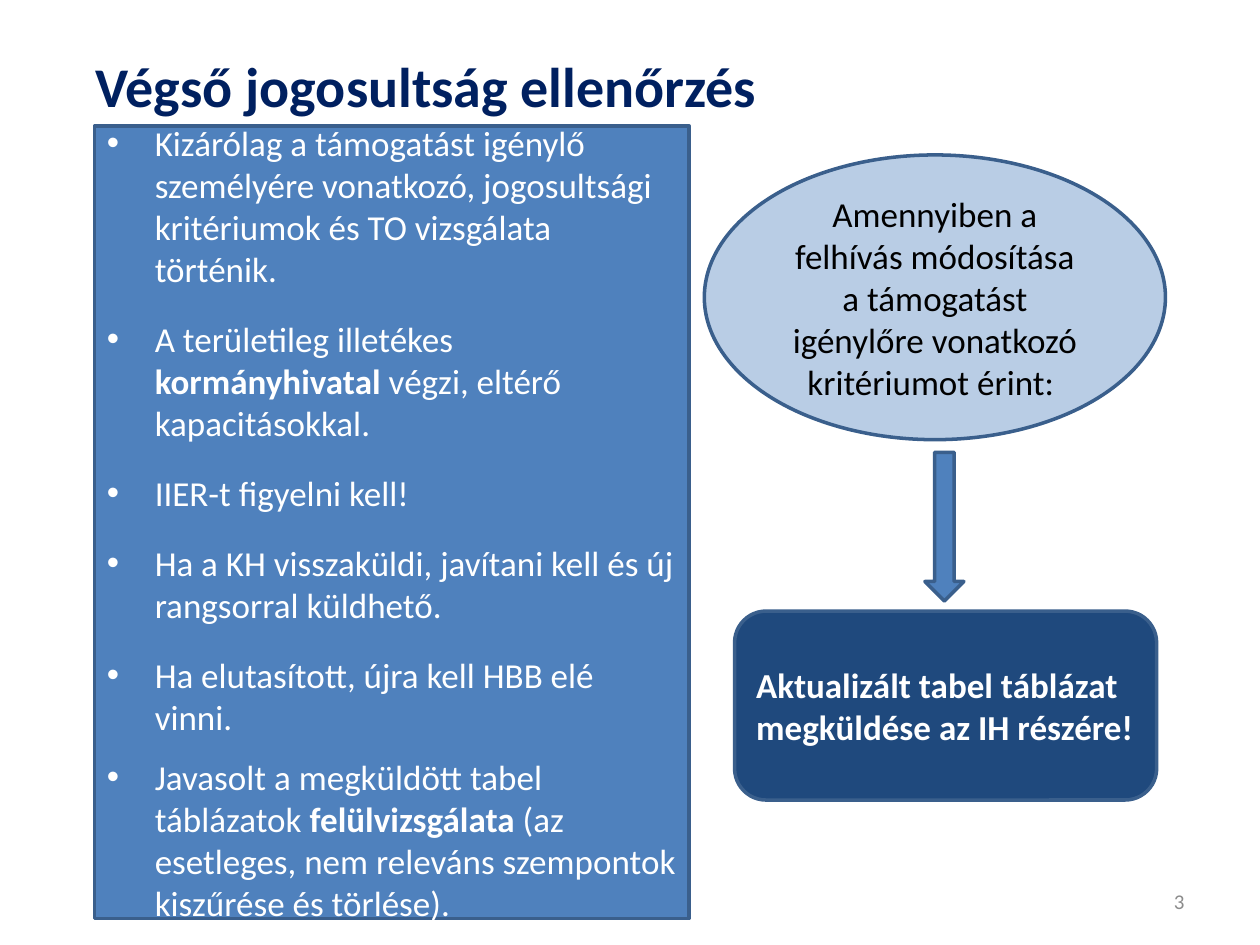
from dataclasses import dataclass
from typing import Optional

import lxml.etree
import pptx
import pptx.dml.color
import pptx.enum.shapes
import pptx.enum.text
import pptx.oxml.ns
import pptx.util

Inches = pptx.util.Inches
Align = pptx.enum.text.PP_ALIGN
Anchor = pptx.enum.text.MSO_ANCHOR
Preset = pptx.enum.shapes.MSO_SHAPE


@dataclass(frozen=True)
class Theme:
    font: str = "Calibri"
    title: str = "002060"
    blue: str = "4F81BD"
    dark: str = "1F497D"
    pale: str = "B9CDE5"
    outline: str = "3A5F8C"
    white: str = "FFFFFF"
    black: str = "000000"
    grey: str = "8C8C8C"
    title_size: int = 32
    body_size: int = 20
    number_size: int = 12
    line_width: int = 2


@dataclass(frozen=True)
class Area:
    left: float
    top: float
    width: float
    height: float

    def lengths(self) -> tuple:
        return tuple(Inches(n) for n in (self.left, self.top, self.width, self.height))


@dataclass(frozen=True)
class Bullet:
    before: str
    strong: str = ""
    after: str = ""
    space_before: int = 6


THEME = Theme()
BULLET_INDENT = Inches(0.38)
BULLETS = [
    Bullet("Kizárólag a támogatást igénylő személyére vonatkozó, jogosultsági "
           "kritériumok és TO vizsgálata történik.", space_before=0),
    Bullet("A területileg illetékes ", "kormányhivatal", " végzi, eltérő kapacitásokkal."),
    Bullet("IIER-t figyelni kell!"),
    Bullet("Ha a KH visszaküldi, javítani kell és új rangsorral küldhető."),
    Bullet("Ha elutasított, újra kell HBB elé vinni."),
    Bullet("Javasolt a megküldött tabel táblázatok ", "felülvizsgálata",
           " (az esetleges, nem releváns szempontok kiszűrése és törlése).", 0),
]


def rgb(color: str) -> pptx.dml.color.RGBColor:
    return pptx.dml.color.RGBColor.from_string(color)


def write(para, text: str, *, color: str, size: int = THEME.body_size,
          bold: bool = False, align: Optional[Align] = None) -> None:
    if align is not None:
        para.alignment = align
    span = para.add_run()
    span.text = text
    span.font.name = THEME.font
    span.font.size = pptx.util.Pt(size)
    span.font.bold = bold
    span.font.color.rgb = rgb(color)


def add_text(page, area: Area, anchor: Anchor):
    box = page.shapes.add_textbox(*area.lengths())
    box.text_frame.word_wrap = True
    box.text_frame.vertical_anchor = anchor
    return box.text_frame.paragraphs[0]


def add_block(page, preset: Preset, area: Area, fill: str):
    block = page.shapes.add_shape(preset, *area.lengths())
    block.shadow.inherit = False
    block.fill.solid()
    block.fill.fore_color.rgb = rgb(fill)
    block.line.color.rgb = rgb(THEME.outline)
    block.line.width = pptx.util.Pt(THEME.line_width)
    block.text_frame.word_wrap = True
    block.text_frame.vertical_anchor = Anchor.MIDDLE
    return block.text_frame


def add_bullets(frame, bullets: list[Bullet]) -> None:
    for index, bullet in enumerate(bullets):
        para = frame.add_paragraph() if index else frame.paragraphs[0]
        para.alignment = Align.LEFT
        para.space_before = pptx.util.Pt(bullet.space_before)
        para.space_after = pptx.util.Pt(10)
        properties = para._p.get_or_add_pPr()
        properties.set("marL", str(BULLET_INDENT))
        properties.set("indent", str(-BULLET_INDENT))
        for tag, name, value in (("a:buFont", "typeface", "Arial"), ("a:buChar", "char", "•")):
            mark = lxml.etree.SubElement(properties, pptx.oxml.ns.qn(tag))
            mark.set(name, value)
        for text, bold in ((bullet.before, False), (bullet.strong, True), (bullet.after, False)):
            if text:
                write(para, text, color=THEME.white, bold=bold)


def main() -> None:
    deck = pptx.Presentation()
    deck.slide_width, deck.slide_height = Inches(10), Inches(7.5)
    page = deck.slides.add_slide(deck.slide_layouts[6])

    number = add_text(page, Area(7.17, 6.95, 2.33, 0.4), Anchor.MIDDLE)
    write(number, "3", color=THEME.grey, size=THEME.number_size, align=Align.RIGHT)
    title = add_text(page, Area(0.43, 0.36, 5.91, 0.64), Anchor.TOP)
    write(title, "Végső jogosultság ellenőrzés", color=THEME.title,
          size=THEME.title_size, bold=True, align=Align.CENTER)

    rules = add_block(page, Preset.RECTANGLE, Area(0.75, 1, 4.72, 6.29), THEME.blue)
    add_bullets(rules, BULLETS)
    result = add_block(page, Preset.ROUNDED_RECTANGLE, Area(5.83, 4.85, 3.35, 1.5), THEME.dark)
    write(result.paragraphs[0], "Aktualizált tabel táblázat megküldése az IH részére!",
          color=THEME.white, bold=True, align=Align.LEFT)
    add_block(page, Preset.DOWN_ARROW, Area(7.34, 3.59, 0.31, 1.18), THEME.blue)
    condition = add_block(page, Preset.OVAL, Area(5.59, 1.23, 3.66, 2.26), THEME.pale)
    write(condition.paragraphs[0], "Amennyiben a felhívás módosítása a támogatást "
          "igénylőre vonatkozó kritériumot érint: ", color=THEME.black, align=Align.CENTER)

    deck.save("out.pptx")


if __name__ == "__main__":
    main()
